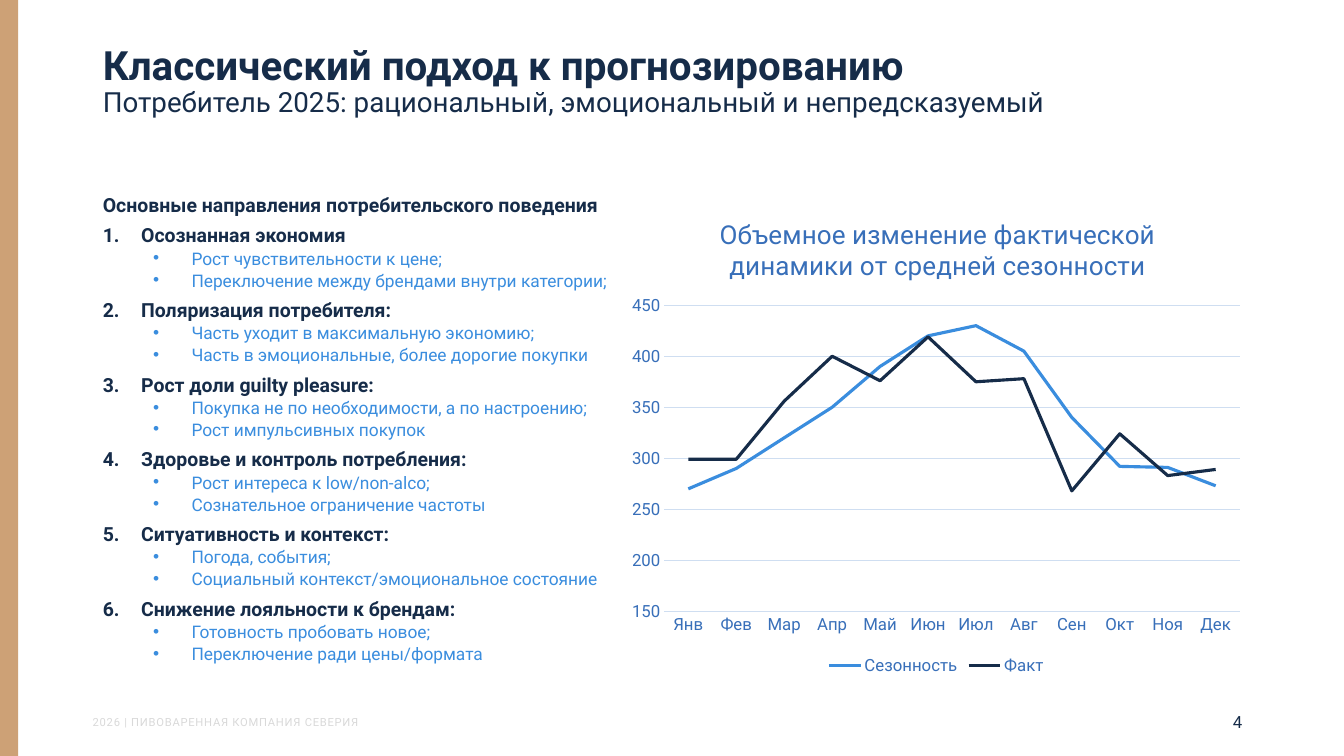
"""Build the slide on the classical approach to forecasting."""
from dataclasses import dataclass
from typing import Any, NamedTuple

from lxml import etree
from pptx import Presentation
from pptx import util as u
from pptx.chart import data as cd
from pptx.dml import color as dc
from pptx.enum import chart as ec
from pptx.enum import shapes as sh
from pptx.enum import text as tx
from pptx.oxml import ns


@dataclass(frozen=True)
class Theme:
    """Colours, type sizes and line spacing."""
    face: str = "Roboto"
    navy: str = "162C49"
    blue: str = "3A8DDE"
    label: str = "386FB9"
    grid: str = "CFDEF1"
    sand: str = "CDA176"
    pale: str = "D9D9D9"
    title: float = 28.8
    lead: float = 19.8
    chart: float = 18.6
    head: float = 13.9
    point: float = 12.4
    small: float = 12
    foot: float = 8
    tight: float = 0.72


class Frame(NamedTuple):
    """A place in percent of the slide's width and height."""
    x: float
    y: float
    w: float
    h: float


class Trend(NamedTuple):
    """A topic with its points."""
    head: str
    points: tuple[str, ...]


class Line(NamedTuple):
    """A chart series with its colour."""
    name: str
    color: str
    vals: tuple[int, ...]


THEME = Theme()
WIDE, HIGH = u.Inches(13.33), u.Inches(7.5)
STRIPE = Frame(0, 0, 1.35, 100)
TITLE = Frame(6.9, 5.33, 86.27, 14.93)
BODY = Frame(6.9, 25.6, 41.79, 64.27)
CHART = Frame(46.14, 25.6, 47.04, 64.27)
FOOT = Frame(6.9, 94.67, 41.79, 1.73)
PAGE = Frame(85.82, 94.67, 7.35, 1.73)

TRENDS = (
    Trend("Осознанная экономия", (
        "Рост чувствительности к цене;",
        "Переключение между брендами внутри категории;")),
    Trend("Поляризация потребителя:", (
        "Часть уходит в максимальную экономию;",
        "Часть в эмоциональные, более дорогие покупки")),
    Trend("Рост доли guilty pleasure:", (
        "Покупка не по необходимости, а по настроению;",
        "Рост импульсивных покупок")),
    Trend("Здоровье и контроль потребления:", (
        "Рост интереса к low/non-alco;",
        "Сознательное ограничение частоты")),
    Trend("Ситуативность и контекст:", (
        "Погода, события;",
        "Социальный контекст/эмоциональное состояние")),
    Trend("Снижение лояльности к брендам:", (
        "Готовность пробовать новое;",
        "Переключение ради цены/формата")),
)
MONTHS = "Янв Фев Мар Апр Май Июн Июл Авг Сен Окт Ноя Дек".split()
LINES = (
    Line("Сезонность", THEME.blue,
         (270, 290, 320, 350, 390, 420, 430, 405, 340, 292, 291, 273)),
    Line("Факт", THEME.navy,
         (299, 299, 356, 400, 376, 419, 375, 378, 268, 324, 283, 289)),
)


def put(item: Any, **vals: Any) -> None:
    """Set attributes from format values."""
    for name, val in vals.items():
        setattr(item, name, val)


def ink(font: Any, size: float, color: str, bold: bool = False) -> None:
    """Format a font."""
    put(font, name=THEME.face, size=u.Pt(size), bold=bold)
    font.color.rgb = dc.RGBColor.from_string(color)


def rule(line: Any, color: str, width: float) -> None:
    """Format a line."""
    line.color.rgb = dc.RGBColor.from_string(color)
    line.width = u.Pt(width)


def scale(frame: Frame) -> tuple[int, ...]:
    """Turn percent into slide lengths."""
    return tuple(int(part * side / 100)
                 for part, side in zip(frame, (WIDE, HIGH) * 2))


def place(shape: Any, frame: Frame) -> Any:
    """Move a placeholder and ready its text frame."""
    put(shape, **dict(zip(("left", "top", "width", "height"), scale(frame))))
    put(shape.text_frame, word_wrap=True, auto_size=tx.MSO_AUTO_SIZE.NONE,
        vertical_anchor=tx.MSO_ANCHOR.TOP)
    return shape.text_frame


def write(para: Any, words: str, size: float, color: str, bold: bool = False) -> Any:
    """Add a formatted run."""
    run = para.add_run()
    run.text = words
    ink(run.font, size, color, bold)
    return run


def mark(para: Any, level: int, tag: str, **vals: str) -> None:
    """Give a paragraph its level, indent and bullet."""
    para.level = level
    props = para._p.get_or_add_pPr()
    props.set("marL", str(u.Inches(0.38 + level / 2)))
    props.set("indent", str(u.Inches(-0.38)))
    etree.SubElement(props, ns.qn(tag), vals)


def draw_title(slide: Any) -> None:
    """Fill the title."""
    para = place(slide.shapes.title, TITLE).paragraphs[0]
    put(para, alignment=tx.PP_ALIGN.LEFT, line_spacing=0.9)
    write(para, "Классический подход к прогнозированию", THEME.title, THEME.navy, True)
    para.add_line_break()
    write(para, "Потребитель 2025: рациональный, эмоциональный и непредсказуемый",
          THEME.lead, THEME.navy)


def draw_body(slide: Any) -> None:
    """Fill the list of trends."""
    frame = place(slide.placeholders[1], BODY)
    para = frame.paragraphs[0]
    put(para, line_spacing=THEME.tight, space_before=u.Pt(0))
    mark(para, 0, "a:buNone")
    put(para._p.pPr, marL=0, indent=0)
    write(para, "Основные направления потребительского поведения",
          THEME.head, THEME.navy, True)
    for trend in TRENDS:
        para = frame.add_paragraph()
        put(para, line_spacing=THEME.tight, space_before=u.Pt(10))
        mark(para, 0, "a:buAutoNum", type="arabicPeriod")
        write(para, trend.head, THEME.head, THEME.navy, True)
        for point in trend.points:
            para = frame.add_paragraph()
            put(para, line_spacing=THEME.tight, space_before=u.Pt(5))
            mark(para, 1, "a:buChar", char="•")
            write(para, point, THEME.point, THEME.blue)


def pin(root: Any, index: int, **vals: Any) -> None:
    """Fix the layout of a chart part."""
    box = root.find(ns.qn("c:layout"))
    if box is None:
        box = etree.SubElement(root, ns.qn("c:layout"))
        root.insert(index, box)
    hand = etree.SubElement(box, ns.qn("c:manualLayout"))
    for name, val in vals.items():
        etree.SubElement(hand, ns.qn(f"c:{name}"), val=str(val))


def draw_chart(slide: Any) -> None:
    """Draw the line chart."""
    data = cd.CategoryChartData()
    data.categories = MONTHS
    for line in LINES:
        data.add_series(line.name, line.vals)
    chart = slide.shapes.add_chart(ec.XL_CHART_TYPE.LINE, *scale(CHART), data).chart
    ink(chart.font, 10, THEME.navy)
    put(chart, has_title=True, has_legend=True)
    write(chart.chart_title.text_frame.paragraphs[0],
          "Объемное изменение фактической динамики от средней сезонности",
          THEME.chart, THEME.label)
    pin(chart.chart_title._element, 1, xMode="edge", yMode="edge", x=0.15, y=0.04)
    pin(chart._chartSpace.chart.plotArea, 0, layoutTarget="inner", xMode="edge",
        yMode="edge", x=0.07, y=0.23, w=0.91, h=0.63)
    put(chart.legend, position=ec.XL_LEGEND_POSITION.BOTTOM, include_in_layout=False)
    ink(chart.legend.font, THEME.small, THEME.label)
    months, scores = chart.category_axis, chart.value_axis
    for axis in (months, scores):
        put(axis, major_tick_mark=ec.XL_TICK_MARK.NONE,
            minor_tick_mark=ec.XL_TICK_MARK.NONE)
        ink(axis.tick_labels.font, THEME.small, THEME.label)
    put(scores, minimum_scale=150, maximum_scale=450, major_unit=50)
    rule(months.format.line, THEME.grid, 0.75)
    rule(scores.major_gridlines.format.line, THEME.grid, 0.75)
    scores.format.line.fill.background()
    chart.plots[0].vary_by_categories = False
    for line, series in zip(LINES, chart.plots[0].series):
        series.smooth = False
        rule(series.format.line, line.color, 2.25)


def draw_edge(slide: Any) -> None:
    """Draw the stripe, the footer and the page number."""
    bar = slide.shapes.add_shape(sh.MSO_SHAPE.RECTANGLE, *scale(STRIPE))
    bar.shadow.inherit = False
    bar.fill.solid()
    bar.fill.fore_color.rgb = dc.RGBColor.from_string(THEME.sand)
    bar.line.fill.background()
    foot = place(slide.shapes.add_textbox(*scale(FOOT)), FOOT)
    put(foot, margin_left=0, margin_top=0, margin_right=0, margin_bottom=0)
    run = write(foot.paragraphs[0], "2026 | ПИВОВАРЕННАЯ КОМПАНИЯ СЕВЕРИЯ",
                THEME.foot, THEME.pale)
    run._r.get_or_add_rPr().set("spc", "50")
    page = place(slide.shapes.add_textbox(*scale(PAGE)), PAGE)
    page.vertical_anchor = tx.MSO_ANCHOR.MIDDLE
    page.paragraphs[0].alignment = tx.PP_ALIGN.RIGHT
    write(page.paragraphs[0], "4", THEME.small, THEME.navy)


def main() -> None:
    """Build and save the deck."""
    deck = Presentation()
    put(deck, slide_width=WIDE, slide_height=HIGH)
    slide = deck.slides.add_slide(deck.slide_layouts[1])
    for draw in (draw_edge, draw_title, draw_body, draw_chart):
        draw(slide)
    deck.save("out.pptx")


if __name__ == "__main__":
    main()
